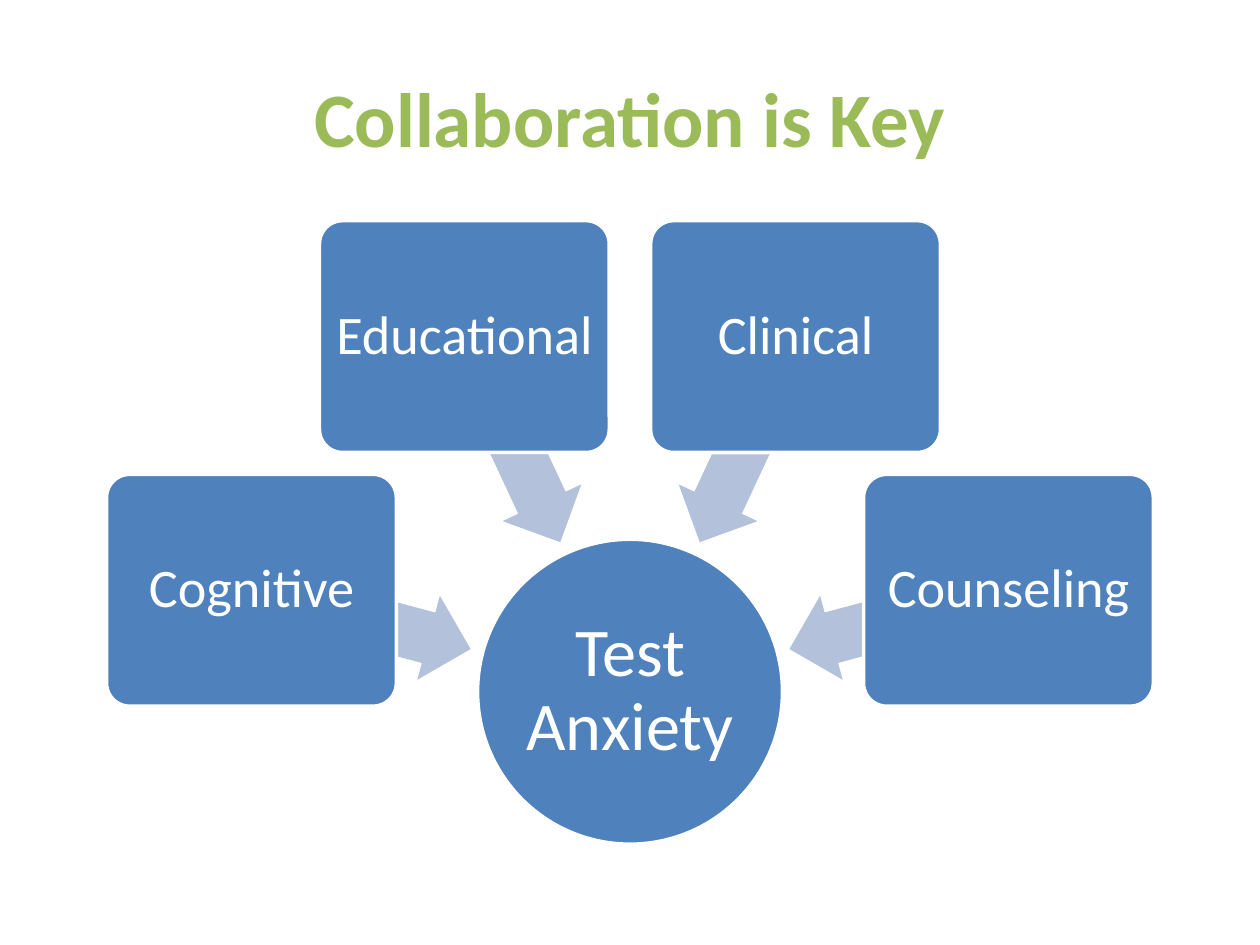
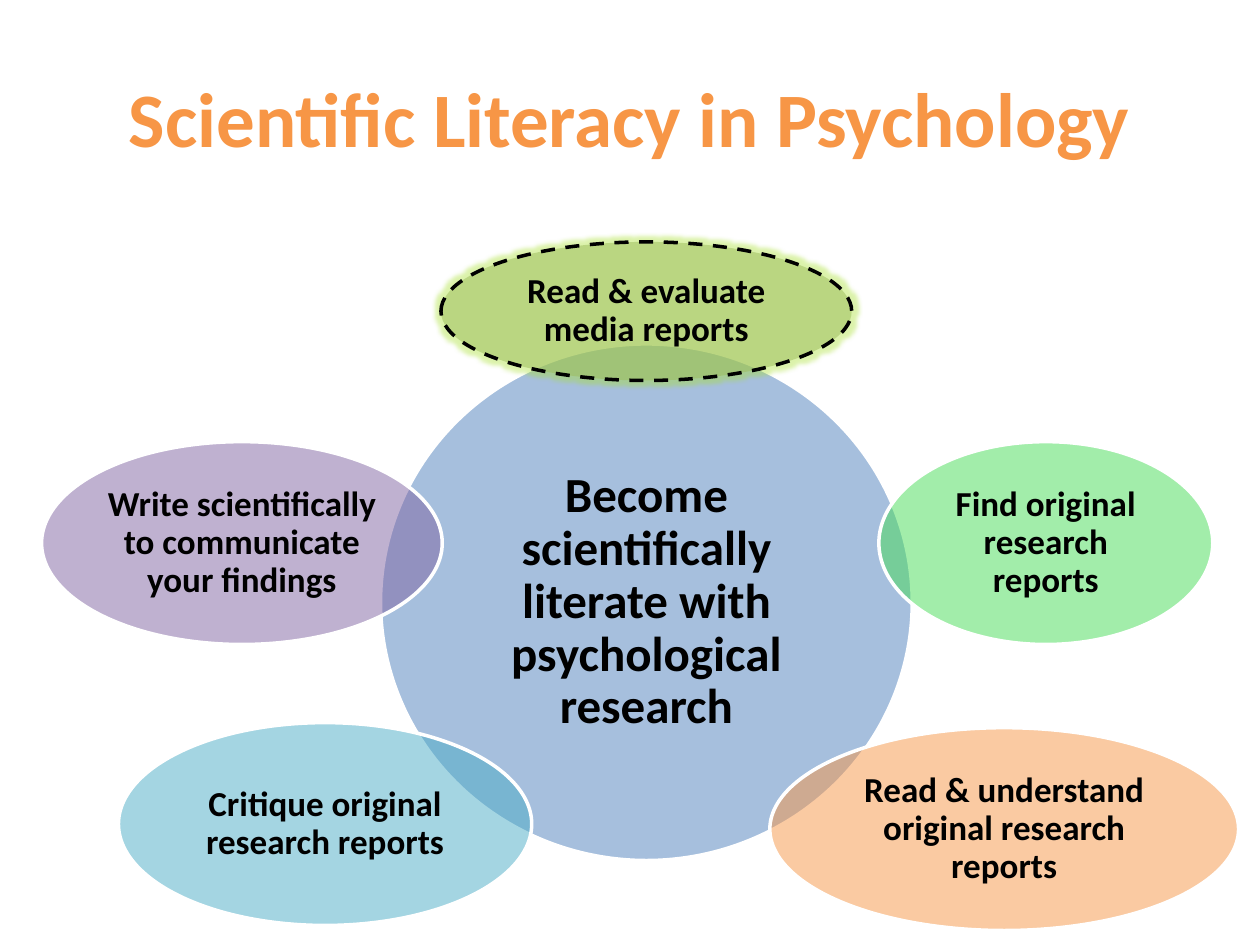
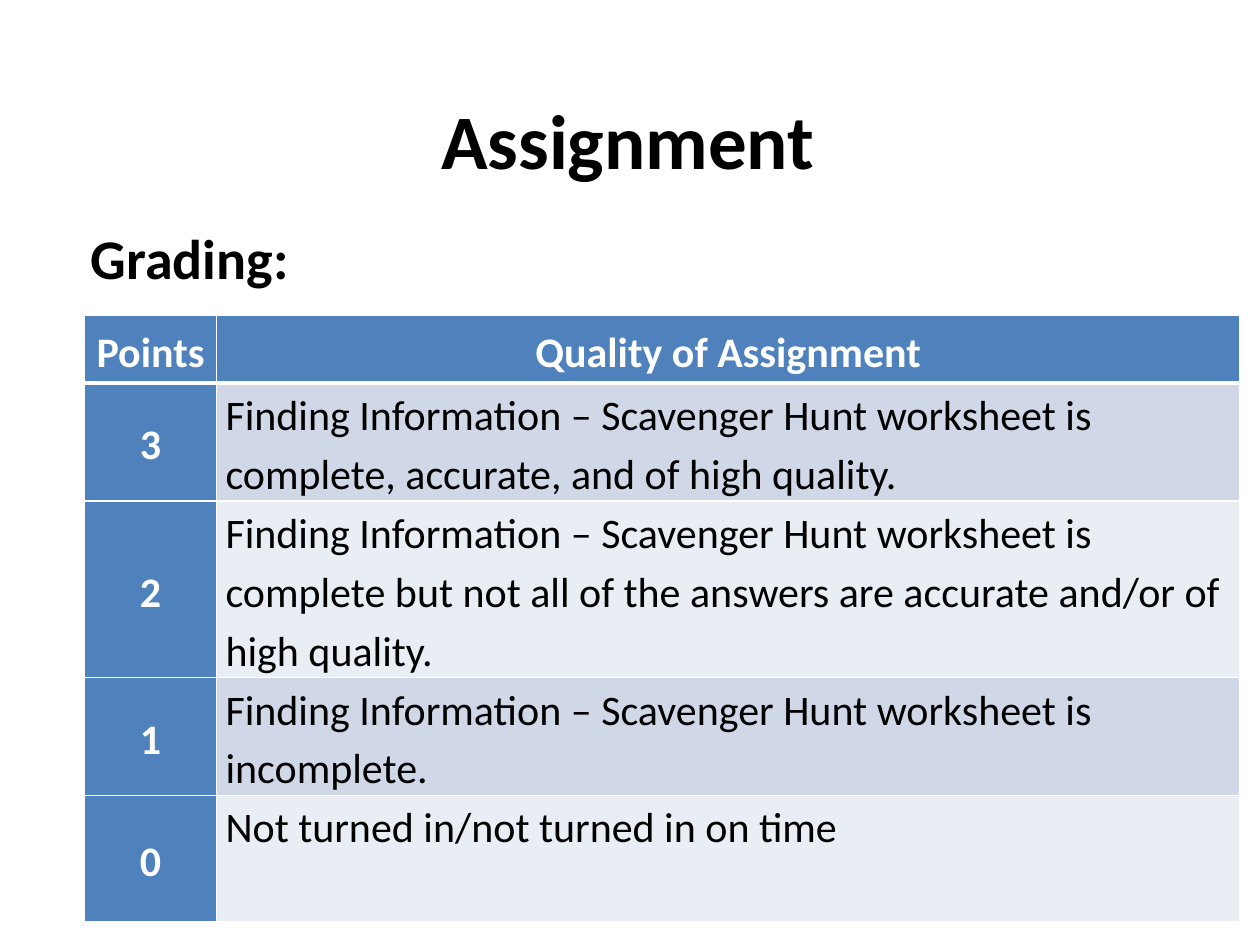
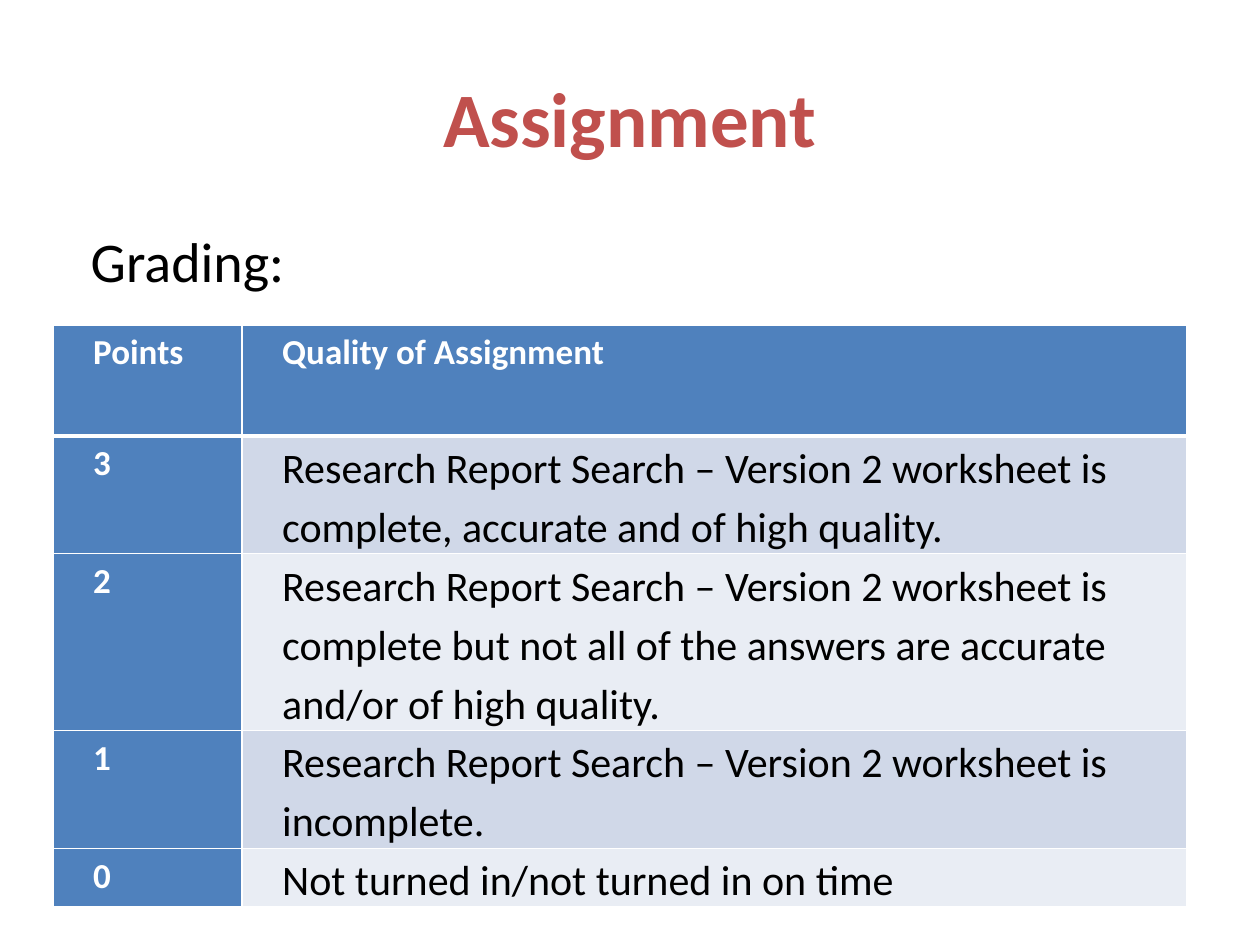
import math

from lxml import etree
from pptx import Presentation
from pptx import util as u
from pptx.dml.color import RGBColor
from pptx.enum import dml, shapes, text
from pptx.oxml import ns

FONT = "Calibri"
WHITE, BLACK = "FFFFFF", "000000"
BLUE, GREEN, ORANGE, RED = "4F81BD", "9BBB59", "F79646", "C0504D"
ARROW_BLUE = "B3C1DB"
BANDS = ("D0D8E8", "E9EDF4")
TITLE_BOX = (0.5, 0.3, 9, 1.25)
TITLE_ONLY, TITLE_AND_BODY = 5, 1

COLLABORATION = {
    "title": "Collaboration is Key", "color": GREEN,
    "hub": "Test Anxiety", "center": (5, 5.49), "hub_size": 2.42,
    "fields": ["Cognitive", "Educational", "Clinical", "Counseling"],
    "field_size": (2.3, 1.84), "field_radius": 3.11,
    "arrow_size": (1.8, 0.69), "arrow_radius": 2.21,
    "first_angle": 15, "angle_step": 50,
}

LITERACY = {
    "title": "Scientific Literacy in Psychology", "color": ORANGE,
    "hub": ("Become scientifically literate with psychological research",
            (5.13, 4.78), (4.22, 4.1)),
    # text, centre, size, fill
    "skills": [
        ("Read & evaluate media reports", (5.13, 2.47), (3.26, 1.1), GREEN),
        ("Find original research reports", (8.3, 4.31), (2.65, 1.61), "47DC57"),
        ("Read & understand original research reports", (7.97, 6.58), (3.72, 1.61), ORANGE),
        ("Critique original research reports", (2.58, 6.54), (3.28, 1.61), "4BACC6"),
        ("Write scientifically to communicate your findings", (1.92, 4.31), (3.18, 1.61), "8064A2"),
    ],
    "highlighted": 0,
}

TABLE_HEAD = ("Points", "Quality of Assignment")
LATE = "Not turned in/not turned in on time"
ASSIGNMENTS = [
    {
        "color": BLACK, "title_box": (0.47, 0.53, 9.03, 1.14),
        "body_box": (0.5, 1.72, 9, 4.78), "body_bold": True,
        "at": (0.67, 2.5), "cols": (1.05, 8.12), "rows": (0.54, 0.91, 1, 0.8, 1),
        "grades": [
            "Finding Information – Scavenger Hunt worksheet is complete, accurate, and of high quality.",
            "Finding Information – Scavenger Hunt worksheet is complete but not all of the answers "
            "are accurate and/or of high quality.",
            "Finding Information – Scavenger Hunt worksheet is incomplete.",
            LATE,
        ],
        "head_pt": 24, "centered": True, "indent": 0,
    },
    {
        "color": RED, "title_box": TITLE_BOX,
        "body_box": (0.5, 1.75, 9, 4.95), "body_bold": False,
        "at": (0.42, 2.58), "cols": (1.5, 7.5), "rows": (0.88, 0.9, 1.32, 0.87, 0.44),
        "grades": [
            "Research Report Search – Version 2 worksheet is complete, accurate and of high quality.",
            "Research Report Search – Version 2 worksheet is complete but not all of the answers "
            "are accurate and/or of high quality.",
            "Research Report Search – Version 2 worksheet is incomplete.",
            LATE,
        ],
        "head_pt": 20, "centered": False, "indent": 0.25,
    },
]


def rgb(color):
    return RGBColor.from_string(color)


def sub(parent, tag, **attrs):
    """Append a DrawingML child element."""
    return etree.SubElement(parent, ns.qn(f"a:{tag}"), {k: str(v) for k, v in attrs.items()})


def place(sp, box):
    sp.left, sp.top, sp.width, sp.height = map(u.Inches, box)


def write(tf, words, size, color, bold=False, align=None):
    """Fill a text frame with one paragraph and return it."""
    tf.text = words
    p = tf.paragraphs[0]
    p.alignment = align
    f = p.font
    f.name, f.size, f.bold = FONT, u.Pt(size), bold
    f.color.rgb = rgb(color)
    return p


def indent(p, inches):
    pPr = p._p.get_or_add_pPr()
    pPr.set("marL", str(u.Inches(inches)))
    pPr.set("indent", "0")
    return pPr


def new_slide(prs, layout, title, color, box=TITLE_BOX):
    s = prs.slides.add_slide(prs.slide_layouts[layout])
    place(s.shapes.title, box)
    s.shapes.title.text_frame.vertical_anchor = text.MSO_ANCHOR.MIDDLE
    write(s.shapes.title.text_frame, title, 44, color, True, text.PP_ALIGN.CENTER)
    return s


def add_centered(s, kind, center, size, fill, line=WHITE):
    """Add a preset shape around its centre point."""
    (x, y), (w, h) = center, size
    sp = s.shapes.add_shape(kind, *map(u.Inches, (x - w / 2, y - h / 2, w, h)))
    sp.shadow.inherit = False
    sp.fill.solid()
    sp.fill.fore_color.rgb = rgb(fill)
    if line:
        sp.line.color.rgb = rgb(line)
        sp.line.width = u.Pt(2)
    else:
        sp.line.fill.background()
    return sp


def label(sp, words, size, color, inset, bold=False):
    tf = sp.text_frame
    tf.word_wrap = True
    tf.vertical_anchor = text.MSO_ANCHOR.MIDDLE
    tf.margin_left = tf.margin_right = tf.margin_top = tf.margin_bottom = u.Inches(inset)
    write(tf, words, size, color, bold, text.PP_ALIGN.CENTER).line_spacing = 0.9


def add_bubble(s, words, center, size, fill, pt, inset=0.03):
    """Add a half transparent ellipse with bold text."""
    sp = add_centered(s, shapes.MSO_SHAPE.OVAL, center, size, fill)
    color = sp._element.spPr.find(ns.qn("a:solidFill"))[0]
    sub(color, "alpha", val=50000)
    label(sp, words, pt, BLACK, inset, True)
    return sp


def highlight(sp):
    """Give a bubble a dashed black outline and a green glow."""
    sp.line.color.rgb = rgb(BLACK)
    sp.line.dash_style = dml.MSO_LINE.DASH
    effects = sp._element.spPr.find(ns.qn("a:effectLst"))
    color = sub(sub(effects, "glow", rad=u.Pt(5)), "srgbClr", val="A7E02D")
    sub(color, "alpha", val=40000)


def collaboration_slide(prs, d):
    s = new_slide(prs, TITLE_ONLY, d["title"], d["color"])
    cx, cy = d["center"]
    hub = add_centered(s, shapes.MSO_SHAPE.OVAL, d["center"], (d["hub_size"],) * 2, BLUE)
    label(hub, d["hub"], 39, WHITE, 0.03)
    for i, field in enumerate(d["fields"]):
        angle = d["first_angle"] + i * d["angle_step"]
        dx, dy = math.cos(math.radians(angle)), math.sin(math.radians(angle))

        def on_ray(radius):
            return cx - radius * dx, cy - radius * dy

        arrow = add_centered(s, shapes.MSO_SHAPE.LEFT_ARROW, on_ray(d["arrow_radius"]),
                             d["arrow_size"], ARROW_BLUE, None)
        arrow.adjustments[0], arrow.adjustments[1] = 0.6, 0.5
        arrow.rotation = 180 + angle
        box = add_centered(s, shapes.MSO_SHAPE.ROUNDED_RECTANGLE, on_ray(d["field_radius"]),
                           d["field_size"], BLUE)
        box.adjustments[0] = 0.1
        label(box, field, 31, WHITE, 0.06)


def literacy_slide(prs, d):
    s = new_slide(prs, TITLE_ONLY, d["title"], d["color"])
    add_bubble(s, *d["hub"], BLUE, 28, 0.04)
    bubbles = [add_bubble(s, *skill, 20) for skill in d["skills"]]
    highlight(bubbles[d["highlighted"]])


def set_borders(cell, row):
    """Draw white cell edges, thick between the head and the grades."""
    tcPr = cell._tc.get_or_add_tcPr()
    for edge in "LRTB":
        thick = (row, edge) in ((0, "B"), (1, "T"))
        ln = sub(tcPr, f"ln{edge}", w=u.Pt(3 if thick else 1))
        sub(sub(ln, "solidFill"), "srgbClr", val=WHITE)


def assignment_slide(prs, d):
    s = new_slide(prs, TITLE_AND_BODY, "Assignment", d["color"], d["title_box"])
    body = s.placeholders[1]
    place(body, d["body_box"])
    p = write(body.text_frame, "Grading:", 32, BLACK, d["body_bold"])
    sub(indent(p, 0.12), "buNone")

    rows = [TABLE_HEAD] + [(str(3 - i), grade) for i, grade in enumerate(d["grades"])]
    box = (*d["at"], sum(d["cols"]), sum(d["rows"]))
    table = s.shapes.add_table(len(rows), len(TABLE_HEAD), *map(u.Inches, box)).table
    table.first_col = True
    for col, width in zip(table.columns, d["cols"]):
        col.width = u.Inches(width)
    for r, (row, height) in enumerate(zip(rows, d["rows"])):
        table.rows[r].height = u.Inches(height)
        for c, words in enumerate(row):
            cell = table.cell(r, c)
            head = r == 0 or c == 0
            middle = head and d["centered"]
            set_borders(cell, r)
            cell.fill.solid()
            cell.fill.fore_color.rgb = rgb(BLUE if head else BANDS[(r - 1) % 2])
            cell.margin_left = cell.margin_right = u.Inches(0.07)
            cell.margin_top = cell.margin_bottom = 0
            cell.vertical_anchor = text.MSO_ANCHOR.MIDDLE if middle else text.MSO_ANCHOR.TOP
            p = write(cell.text_frame, words, d["head_pt"] if head else 24,
                      WHITE if head else BLACK, head,
                      text.PP_ALIGN.CENTER if middle else text.PP_ALIGN.LEFT)
            p.line_spacing = 1.15
            if c == 1:
                p.space_after = u.Pt(10)
            indent(p, d["indent"])


def main():
    prs = Presentation()
    prs.slide_width, prs.slide_height = u.Inches(10), u.Inches(7.5)
    collaboration_slide(prs, COLLABORATION)
    literacy_slide(prs, LITERACY)
    for assignment in ASSIGNMENTS:
        assignment_slide(prs, assignment)
    prs.save("out.pptx")


if __name__ == "__main__":
    main()
